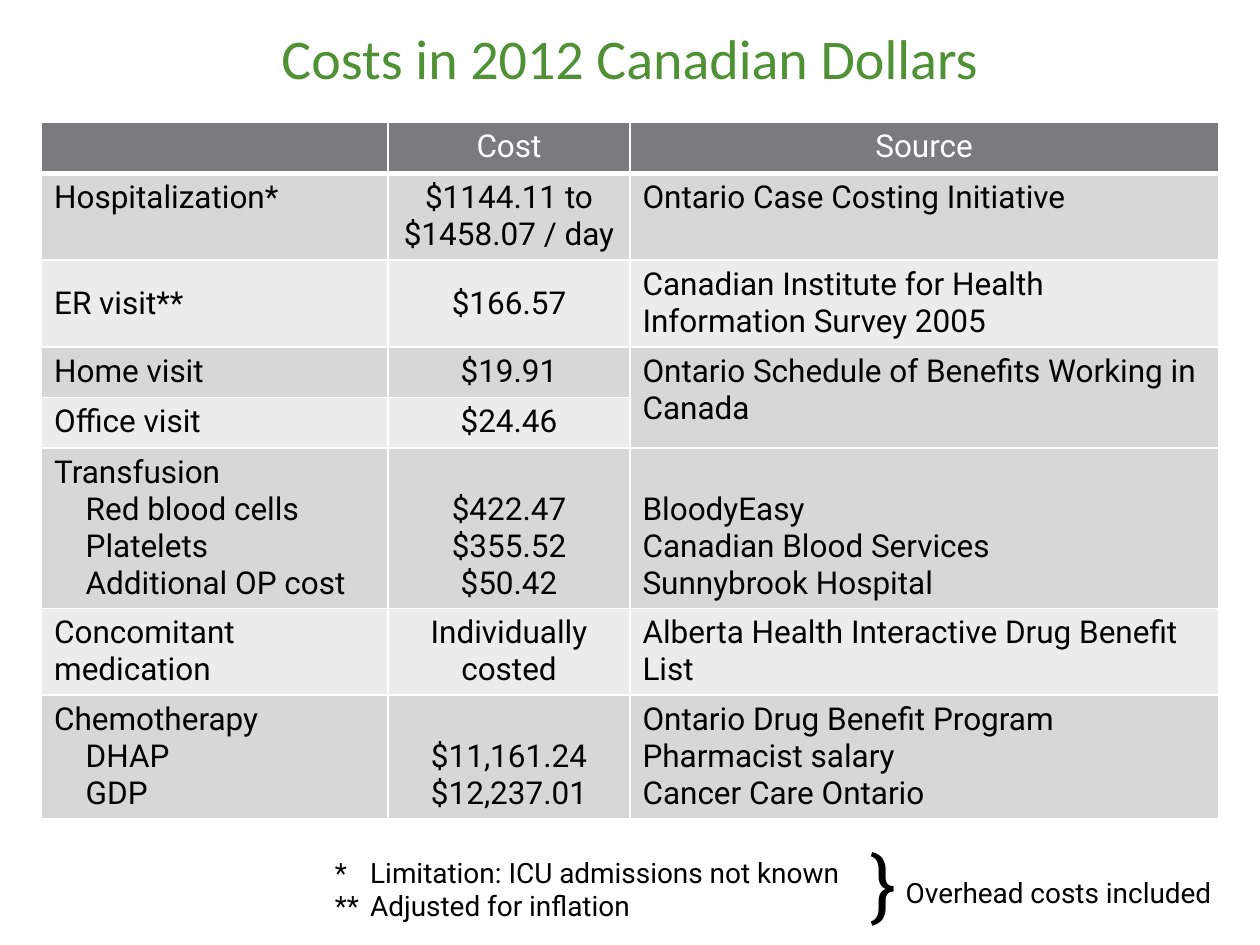
"""Build a slide with a table of health care costs in 2012 Canadian dollars."""
import pptx
import pptx.dml.color
import pptx.enum.text
import pptx.oxml
import pptx.oxml.ns
import pptx.util

Inches, Pt = pptx.util.Inches, pptx.util.Pt
RGBColor = pptx.dml.color.RGBColor
ALIGN, ANCHOR = pptx.enum.text.PP_ALIGN, pptx.enum.text.MSO_ANCHOR

GREEN = RGBColor(0x51, 0x91, 0x36)
GRAY = RGBColor(0x79, 0x7B, 0x7E)
BANDS = (RGBColor(0xEC, 0xEC, 0xEC), RGBColor(0xD7, 0xD7, 0xD8))
WHITE = RGBColor(0xFF, 0xFF, 0xFF)
BLACK = RGBColor(0, 0, 0)

TITLE = "Costs in 2012 Canadian Dollars"
HEADINGS = ([], ["Cost"], ["Source"])
COSTS = [
    (["Hospitalization*"], ["$1144.11 to $1458.07 / day"], ["Ontario Case Costing Initiative"]),
    (["ER visit**"], ["$166.57"], ["Canadian Institute for Health Information Survey 2005"]),
    (["Home visit"], ["$19.91"], ["Ontario Schedule of Benefits Working in Canada"]),
    (["Office visit"], ["$24.46"], []),
    (["Transfusion", "Red blood cells", "Platelets", "Additional OP cost"],
     ["$422.47", "$355.52", "$50.42"],
     ["BloodyEasy", "Canadian Blood Services", "Sunnybrook Hospital"]),
    (["Concomitant medication"], ["Individually costed"],
     ["Alberta Health Interactive Drug Benefit List"]),
    (["Chemotherapy", "DHAP", "GDP"], ["$11,161.24", "$12,237.01"],
     ["Ontario Drug Benefit Program", "Pharmacist salary", "Cancer Care Ontario"]),
]
ROW_LINES = (1, 2, 2, 1, 1, 4, 2, 3)
COLUMN_WIDTHS = (2.75, 1.92, 4.67)
CENTRED_ROW, SHARED_SOURCE_ROW = 2, 3
NOTES = [
    (["*\tLimitation: ICU admissions not known", "**\tAdjusted for inflation"],
     (2.56, 6.74, 4.25, 0.64), 16, 0.28),
    (["}"], (6.81, 6.58, 0.5, 0.84), 44, 0),
    (["Overhead costs included"], (7.09, 6.9, 2.8, 0.37), 16, 0),
]


def add_run(paragraph, text, size, color, font="Roboto"):
    run = paragraph.add_run()
    run.text = text
    run.font.name, run.font.size, run.font.bold = font, Pt(size), False
    run.font.color.rgb = color


def paragraphs(frame, lines):
    for number, line in enumerate(lines):
        yield frame.add_paragraph() if number else frame.paragraphs[0], line


def set_borders(cell, bottom):
    properties = cell._tc.get_or_add_tcPr()
    for place, (side, width) in enumerate(zip("LRTB", (1, 1, 1, bottom))):
        properties.insert(place, pptx.oxml.parse_xml(
            f'<a:ln{side} {pptx.oxml.ns.nsdecls("a")} w="{Pt(width)}"><a:solidFill>'
            f'<a:srgbClr val="{WHITE}"/></a:solidFill></a:ln{side}>'))


def fill_cell(cell, row, column, lines, label_count):
    header = row == 0
    cell.fill.solid()
    cell.fill.fore_color.rgb = GRAY if header else BANDS[row % 2]
    set_borders(cell, 3 if header else 1)
    if row == CENTRED_ROW and column < 2:
        cell.vertical_anchor = ANCHOR.MIDDLE
    elif label_count > len(lines) > 0:
        cell.vertical_anchor = ANCHOR.BOTTOM
    for number, (paragraph, line) in enumerate(paragraphs(cell.text_frame, lines)):
        if column == 0 and number:
            paragraph._p.get_or_add_pPr().set("marL", str(Inches(0.25)))
        paragraph.alignment = ALIGN.CENTER if header or column == 1 else ALIGN.LEFT
        add_run(paragraph, line, 18, WHITE if header else BLACK)


def add_costs(slide):
    heights = [0.11 + 0.29 * lines for lines in ROW_LINES]
    table = slide.shapes.add_table(
        len(heights), len(COLUMN_WIDTHS), Inches(0.33), Inches(0.97),
        Inches(sum(COLUMN_WIDTHS)), Inches(sum(heights))).table
    for column, width in zip(table.columns, COLUMN_WIDTHS):
        column.width = Inches(width)
    for row, height in zip(table.rows, heights):
        row.height = Inches(height)
    for row, entries in enumerate([HEADINGS, *COSTS]):
        for column, lines in enumerate(entries):
            fill_cell(table.cell(row, column), row, column, lines, len(entries[0]))
    table.cell(SHARED_SOURCE_ROW, 2).merge(table.cell(SHARED_SOURCE_ROW + 1, 2))


def add_note(slide, lines, place, size, hanging):
    frame = slide.shapes.add_textbox(*map(Inches, place)).text_frame
    frame.word_wrap = True
    for paragraph, line in paragraphs(frame, lines):
        if hanging:
            properties = paragraph._p.get_or_add_pPr()
            properties.set("marL", str(Inches(hanging)))
            properties.set("indent", str(-Inches(hanging)))
        add_run(paragraph, line, size, BLACK)


def main():
    deck = pptx.Presentation()
    deck.slide_width, deck.slide_height = Inches(10), Inches(7.5)
    slide = deck.slides.add_slide(deck.slide_layouts[5])
    title = slide.shapes.title
    title.left, title.top, title.width, title.height = map(Inches, (0.75, -0.17, 8.5, 1.25))
    title.text_frame.vertical_anchor = ANCHOR.MIDDLE
    heading = title.text_frame.paragraphs[0]
    heading.alignment = ALIGN.CENTER
    add_run(heading, TITLE, 32, GREEN, "Calibri")
    add_costs(slide)
    for note in NOTES:
        add_note(slide, *note)
    deck.save("out.pptx")


if __name__ == "__main__":
    main()
